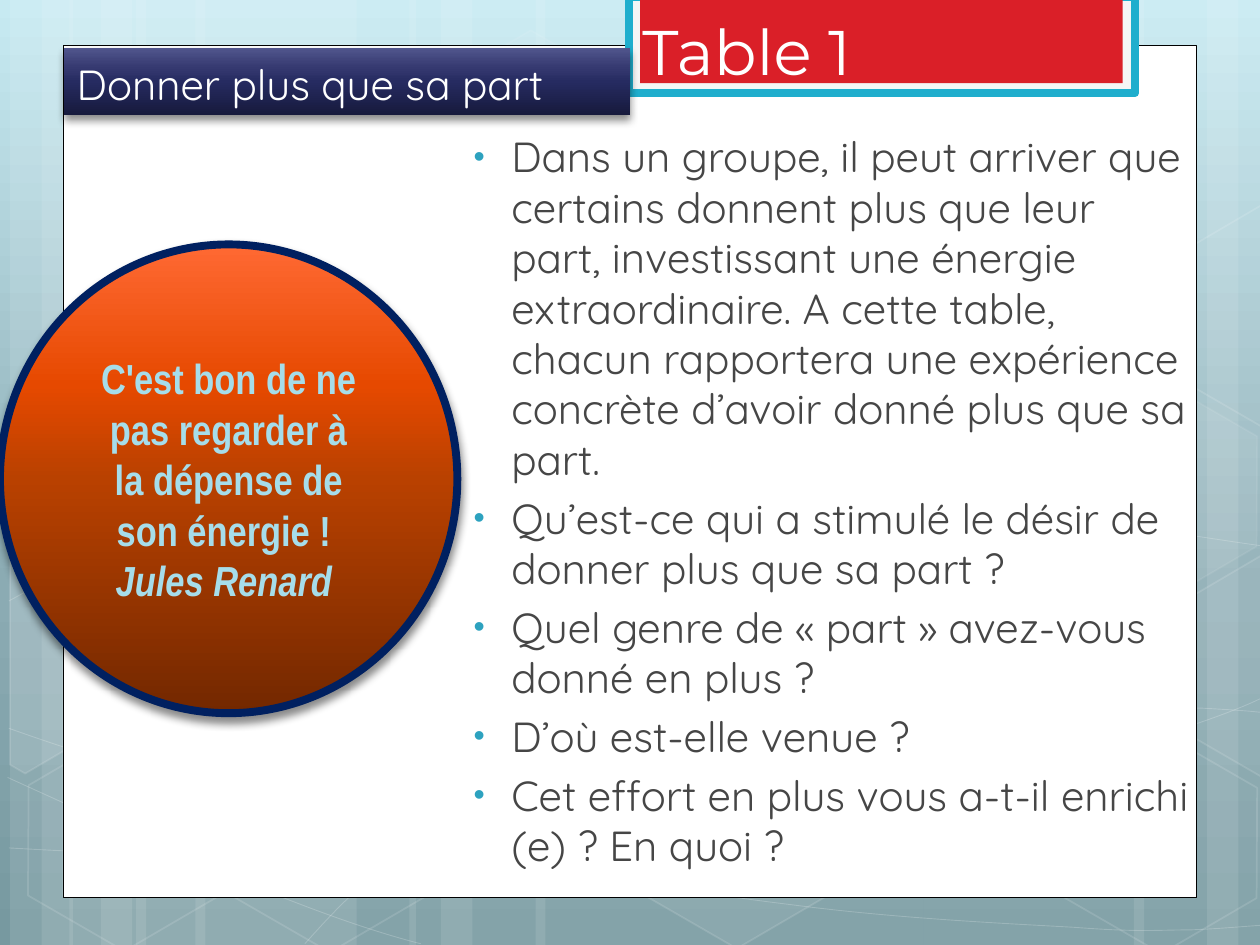
"""Build the "Donner plus que sa part" discussion slide."""
import lxml.etree
import pptx
import pptx.dml.color
import pptx.enum.shapes
import pptx.enum.text
import pptx.oxml.ns
import pptx.util

Inches = pptx.util.Inches
Pt = pptx.util.Pt
SHAPES = pptx.enum.shapes.MSO_SHAPE
ANCHORS = pptx.enum.text.MSO_ANCHOR
qn = pptx.oxml.ns.qn

COLOURS = {
    "white": "FFFFFF", "black": "000000", "navy": "002060", "pale": "F5F5F5",
    "cyan": "1FAECD", "red": "DA1F28", "text": "464646", "bullet": "2DA2BF", "quote": "A6DDEA",
}
GRADIENTS = {
    "sky": (90, [(0, "C7EAF2"), (62, "8BABB3"), (100, "7799A0")]),
    "indigo": (270, [(0, "171A3D"), (50, "262B61"), (70, "353970"), (100, "51568D")]),
    "orange": (270, [(0, "732800"), (50, "B94100"), (70, "E64900"), (100, "FF6933")]),
}
HARD_SPACE = chr(160)
TITLE = "Donner plus que sa part"
LABEL = "Table 1"
QUOTE = "C'est~bon~de ne pas~regarder~à la~dépense~de son~énergie~!~"
AUTHOR = "Jules Renard~"
QUESTIONS = [
    "Dans un groupe, il peut arriver que certains donnent plus que leur part, investissant une énergie "
    "extraordinaire. A cette table, chacun rapportera une expérience concrète d’avoir donné plus que sa part.",
    "Qu’est-ce qui a stimulé le désir de donner plus que sa part ?",
    "Quel genre de «~part~» avez-vous donné en plus ?",
    "D’où est-elle venue ?",
    "Cet effort en plus vous a-t-il enrichi (e) ? En quoi ?",
]
BANDS = [(1.08, 1.75), (0.08, 0.5), (0.33, 0.83), (1.55, 1.75), (0.55, 0.5), (0.8, 0.83),
         (7.33, 1.75), (9.58, 0.5), (9, 0.83), (4.25, 3.08), (3.25, 0.5), (3.5, 0.83)]
CURVES = [
    [(0.07, 6.73), (0.61, 6.76), (1.15, 6.79), (1.9, 6.78), (2.65, 6.77), (3.58, 6.75), (4.58, 6.65),
     (5.58, 6.55), (7, 6.36), (7.92, 6.17), (8.83, 5.98), (9.77, 5.68), (10.07, 5.51)],
    [(0.07, 4.77), (0.36, 4.61), (0.65, 4.46), (1.21, 4.31), (1.78, 4.16), (2.59, 3.94), (3.47, 3.87),
     (4.36, 3.8), (5.44, 3.79), (6.54, 3.87), (7.64, 3.95), (9.47, 4.26), (10.07, 4.34)],
    [(0.06, 6.17), (1.27, 6.72), (2.47, 7.27), (3.34, 7.49)],
    [(0.07, 5.78), (0.38, 5.89), (0.7, 6), (1.28, 6.16), (1.86, 6.31), (2.73, 6.56), (3.57, 6.73),
     (4.4, 6.9), (5.45, 7.08), (6.28, 7.18), (7.11, 7.29), (8, 7.33), (8.53, 7.36),
     (9.05, 7.4), (9.19, 7.38), (9.45, 7.38), (9.71, 7.37), (9.89, 7.35), (10.07, 7.34)],
    [(2.42, 7.49), (2.6, 7.29), (2.78, 7.09), (3.02, 6.91), (3.26, 6.73), (3.6, 6.53), (3.88, 6.39),
     (4.16, 6.25), (4.33, 6.19), (4.7, 6.09), (5.06, 5.99), (5.73, 5.85), (6.08, 5.78),
     (6.44, 5.71), (6.49, 5.71), (6.8, 5.69), (7.11, 5.66), (7.6, 5.63), (7.94, 5.62),
     (8.29, 5.61), (8.86, 5.62), (8.86, 5.62), (9.08, 5.62), (9.31, 5.62), (9.53, 5.62),
     (9.71, 5.63), (9.88, 5.64), (9.97, 5.65), (10.06, 5.66), (10.03, 5.65), (10.06, 5.66)],
]
HEXAGONS = [(3.34, 0.36, 4, 8), (4.97, 5.89, 6, 12), (0.11, 5.91, 0, 12), (0.14, 3.12, 7, 8),
            (1.74, 5.92, 0, 12), (7.53, 4.53, 10, 12), (8.34, 5.93, 0, 12), (8.34, 3.14, 7, 8)]
CUT_HEXAGONS = [
    (10, [(0.08, 4.45), (0.19, 4.38), (0.96, 4.82), (0.95, 5.7), (0.2, 6.14), (0.08, 6.07)]),
    (4, [(9.26, 4.85), (10.01, 4.41), (10.09, 4.46), (10.09, 6.13), (10.02, 6.17), (9.26, 5.73)]),
    (0, [(9.26, 2.07), (10.01, 1.63), (10.1, 1.68), (10.09, 3.35), (10.02, 3.39), (9.26, 2.95)]),
]


def rgb(name):
    return pptx.dml.color.RGBColor.from_string(COLOURS[name])


def add_node(parent, tag, **attributes):
    node = lxml.etree.SubElement(parent, qn(tag))
    for key, value in attributes.items():
        node.set(key, str(value))
    return node


def paint(fill, holder, name, opacity=100):
    if not opacity:
        fill.background()
        return
    fill.solid()
    solid = holder.find(qn("a:solidFill"))
    if name in GRADIENTS:
        angle, stops = GRADIENTS[name]
        gradient = lxml.etree.Element(qn("a:gradFill"), rotWithShape="1")
        stop_list = add_node(gradient, "a:gsLst")
        for position, colour in stops:
            add_node(add_node(stop_list, "a:gs", pos=position * 1000), "a:srgbClr", val=colour)
        add_node(gradient, "a:lin", ang=angle * 60000, scaled=0)
        holder.replace(solid, gradient)
        return
    fill.fore_color.rgb = rgb(name)
    if opacity < 100:
        add_node(solid[0], "a:alpha", val=opacity * 1000)


def style(shape, fill, opacity=100, line=None, width=1, line_opacity=100, shadow=False):
    properties = shape.element.spPr
    paint(shape.fill, properties, fill, opacity)
    if line:
        shape.line.width = Pt(width)
        paint(shape.line.fill, properties.find(qn("a:ln")), line, line_opacity)
    else:
        shape.line.fill.background()
    shape.shadow.inherit = False
    if shadow:
        outer = add_node(properties.find(qn("a:effectLst")), "a:outerShdw", blurRad=Pt(5), dist=Pt(3),
                         dir=90 * 60000, rotWithShape=0)
        add_node(add_node(outer, "a:srgbClr", val=COLOURS["black"]), "a:alpha", val=45000)
    return shape


def add_shape(page, kind, place, *looks, **more_looks):
    return style(page.shapes.add_shape(kind, *map(Inches, place)), *looks, **more_looks)


def add_outline(page, points, close):
    corners = [(Inches(x), Inches(y)) for x, y in points]
    builder = page.shapes.build_freeform(*corners[0])
    builder.add_line_segments(corners[1:], close=close)
    return builder.convert_to_shape()


def add_curve(page, points):
    curve = add_outline(page, points, False)
    segments = list(curve.element.iter(qn("a:lnTo")))
    outline = segments[0].getparent()
    for start in range(0, len(segments), 3):
        bend = add_node(outline, "a:cubicBezTo")
        for segment in segments[start:start + 3]:
            bend.append(segment[0])
            outline.remove(segment)
    return curve


def write(box, lines, font, size, colour, anchor, align=pptx.enum.text.PP_ALIGN.LEFT):
    frame = box.text_frame
    frame.word_wrap = True
    frame.vertical_anchor = anchor
    frame.text = "\n".join(lines).replace("~", HARD_SPACE)
    for para in frame.paragraphs:
        para.alignment = align
        for span in para.runs:
            span.font.name, span.font.size = font, Pt(size)
            span.font.color.rgb = rgb(colour)
    return frame.paragraphs


def add_bullet(para):
    para.space_before = Pt(4.8)
    properties = para._p.get_or_add_pPr()
    properties.set("marL", str(Inches(0.38)))
    properties.set("indent", str(Inches(-0.3)))
    add_node(add_node(properties, "a:buClr"), "a:srgbClr", val=COLOURS["bullet"])
    add_node(properties, "a:buSzPct", val=76000)
    add_node(properties, "a:buFont", typeface="Arial")
    add_node(properties, "a:buChar", char="•")


def draw_backdrop(page):
    background = page.background.fill
    background.solid()
    paint(background, page.element.find(".//" + qn("p:bgPr")), "sky")
    for left, width in BANDS:
        add_shape(page, SHAPES.RECTANGLE, (left, 0, width, 7.5), "white", 10)
    for points in CURVES:
        style(add_curve(page, points), "white", 0, "white", 0.5, 20)
    for left, top, opacity, line_opacity in HEXAGONS:
        hexagon = add_shape(page, SHAPES.HEXAGON, (left, top, 1.75, 1.52), "white", opacity, "white", 1, line_opacity)
        hexagon.adjustments[0] = 0.285
        hexagon.rotation = 30
    for opacity, points in CUT_HEXAGONS:
        style(add_outline(page, points, True), "white", opacity, "white", 1, 12)


def main():
    deck = pptx.Presentation()
    deck.slide_width, deck.slide_height = Inches(10), Inches(7.5)
    page = deck.slides.add_slide(deck.slide_layouts[6])
    draw_backdrop(page)
    add_shape(page, SHAPES.RECTANGLE, (0.5, 0.36, 9, 6.76), "white", line="black", width=0.5)
    add_shape(page, SHAPES.RECTANGLE, (4.99, -0.02, 4.02, 0.76), "pale", line="cyan", width=4.33)
    add_shape(page, SHAPES.RECTANGLE, (5.08, -0.02, 3.83, 0.68), "red")
    title = add_shape(page, SHAPES.RECTANGLE, (0.51, 0.38, 4.49, 0.53), "indigo", shadow=True)
    write(title, [TITLE], "Quicksand", 24, "white", ANCHORS.BOTTOM)
    body = page.shapes.add_textbox(*map(Inches, (3.58, 0.99, 5.98, 6.14)))
    for para in write(body, QUESTIONS, "Quicksand", 24, "text", ANCHORS.TOP):
        add_bullet(para)
    label = page.shapes.add_textbox(*map(Inches, (5, 0, 3.07, 0.75)))
    write(label, [LABEL], "Montserrat", 36, "white", ANCHORS.BOTTOM)
    circle = add_shape(page, SHAPES.OVAL, (0, 1.94, 3.63, 3.72), "orange", line="navy", width=4.5, shadow=True)
    quote = write(circle, [QUOTE, AUTHOR], "Arial Narrow", 24, "quote", ANCHORS.MIDDLE,
                  pptx.enum.text.PP_ALIGN.CENTER)
    for para in quote:
        para.runs[0].font.bold = True
    quote[-1].runs[0].font.italic = True
    deck.save("out.pptx")


if __name__ == "__main__":
    main()
